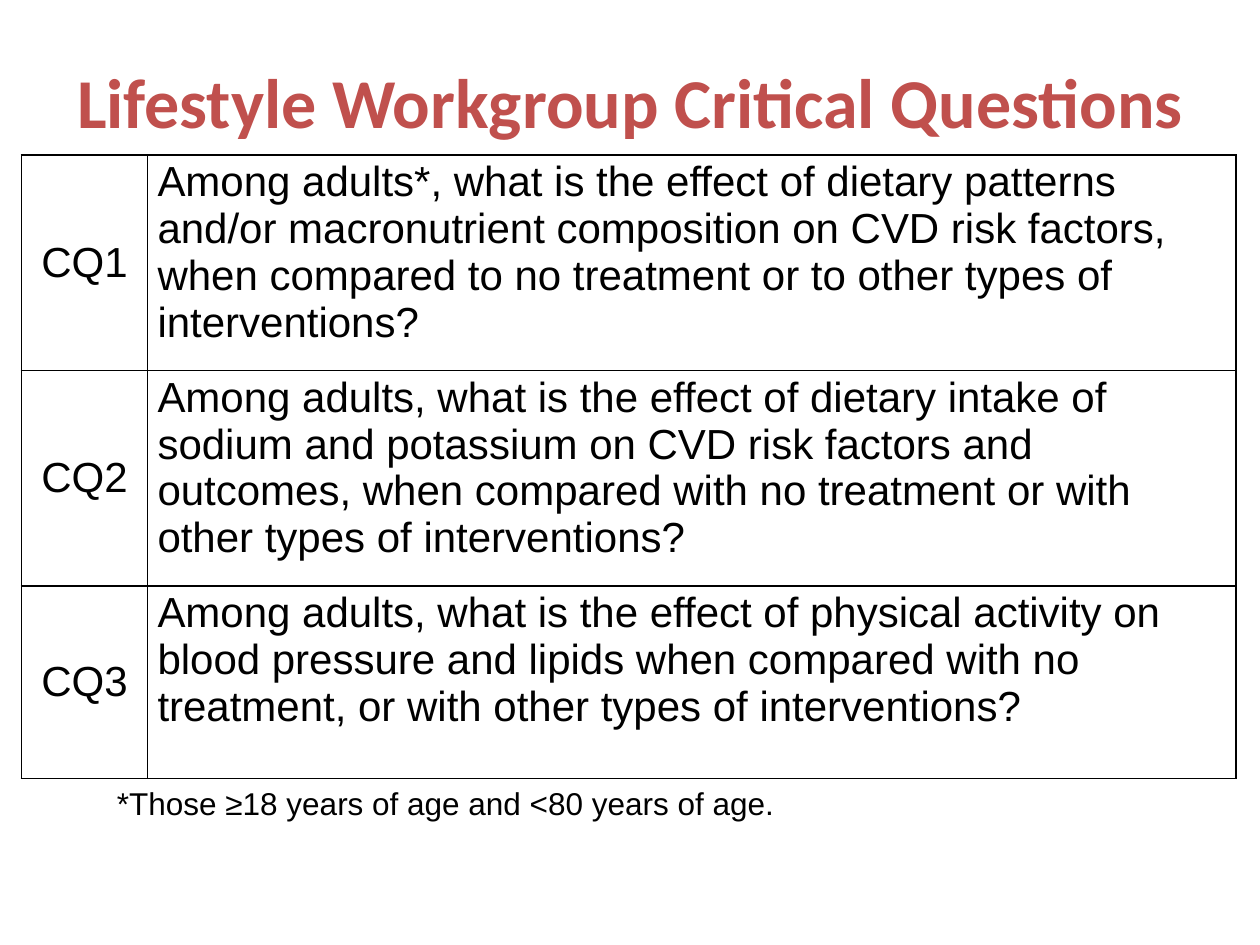
from lxml import etree
from pptx import Presentation
from pptx.dml.color import RGBColor
from pptx.enum.text import MSO_ANCHOR, PP_ALIGN
from pptx.oxml.ns import qn
from pptx.util import Inches, Pt

RED = RGBColor(0xC0, 0x50, 0x4D)
BLACK = RGBColor(0, 0, 0)
CENTER, LEFT = PP_ALIGN.CENTER, PP_ALIGN.LEFT
MIDDLE, TOP = MSO_ANCHOR.MIDDLE, MSO_ANCHOR.TOP
TITLE_ONLY = 5

QUESTIONS = [
    ("CQ1", "Among adults*, what is the effect of dietary patterns and/or macronutrient "
            "composition on CVD risk factors, when compared to no treatment or to other "
            "types of interventions?"),
    ("CQ2", "Among adults, what is the effect of dietary intake of sodium and potassium on "
            "CVD risk factors and outcomes, when compared with no treatment or with other "
            "types of interventions?"),
    ("CQ3", "Among adults, what is the effect of physical activity on blood pressure and "
            "lipids when compared with no treatment, or with other types of interventions?"),
]
COLUMN_WIDTHS = [1, 8.64]
ROW_HEIGHTS = [1.71, 1.71, 1.53]


def write(frame, text, font_name, size, color, align=LEFT, bold=False):
    frame.word_wrap = True
    para = frame.paragraphs[0]
    para.text = text
    para.alignment = align
    para.font.name = font_name
    para.font.size = Pt(size)
    para.font.color.rgb = color
    para.font.bold = bold
    return para


def add_borders(cell):
    properties = cell._tc.get_or_add_tcPr()
    for index, side in enumerate(("lnL", "lnR", "lnT", "lnB")):
        line = etree.Element(qn(f"a:{side}"), w=str(Pt(1)))
        fill = etree.SubElement(line, qn("a:solidFill"))
        etree.SubElement(fill, qn("a:srgbClr"), val=str(BLACK))
        properties.insert(index, line)


def place_title(page, left, top, width, height):
    title = page.shapes.title
    title.left, title.top = Inches(left), Inches(top)
    title.width, title.height = Inches(width), Inches(height)
    title.text_frame.vertical_anchor = MIDDLE
    write(title.text_frame, "Lifestyle Workgroup Critical Questions",
          "Calibri", 40, RED, CENTER, True)


def fill_cell(cell, text, align, anchor, space_before):
    cell.fill.background()
    cell.margin_left = cell.margin_right = Inches(0.08)
    cell.margin_top = cell.margin_bottom = Inches(0.03)
    cell.vertical_anchor = anchor
    para = write(cell.text_frame, text, "Arial", 24, BLACK, align)
    para.space_before = Pt(space_before)
    para.space_after = Pt(6)
    add_borders(cell)


def place_questions(page, left, top):
    table = page.shapes.add_table(
        len(QUESTIONS), len(COLUMN_WIDTHS), Inches(left), Inches(top),
        Inches(sum(COLUMN_WIDTHS)), Inches(sum(ROW_HEIGHTS))).table
    table.first_row = table.horz_banding = False
    for column, width in zip(table.columns, COLUMN_WIDTHS):
        column.width = Inches(width)
    for index, (row, height) in enumerate(zip(table.rows, ROW_HEIGHTS)):
        row.height = Inches(height)
        label, question = QUESTIONS[index]
        space_before = 6 if index == 0 else 0
        fill_cell(row.cells[0], label, CENTER, MIDDLE, space_before)
        fill_cell(row.cells[1], question, LEFT, TOP, space_before)


def place_footnote(page, left, top, width, height):
    box = page.shapes.add_textbox(Inches(left), Inches(top), Inches(width), Inches(height))
    write(box.text_frame, "*Those ≥18 years of age and <80 years of age.",
          "Arial", 18, BLACK)


def main():
    deck = Presentation()
    deck.slide_width, deck.slide_height = Inches(10), Inches(7.5)
    page = deck.slides.add_slide(deck.slide_layouts[TITLE_ONLY])
    place_title(page, 0, 0.17, 10, 1.25)
    place_questions(page, 0.17, 1.23)
    place_footnote(page, 0.83, 6.17, 8.08, 0.71)
    deck.save("out.pptx")


if __name__ == "__main__":
    main()
